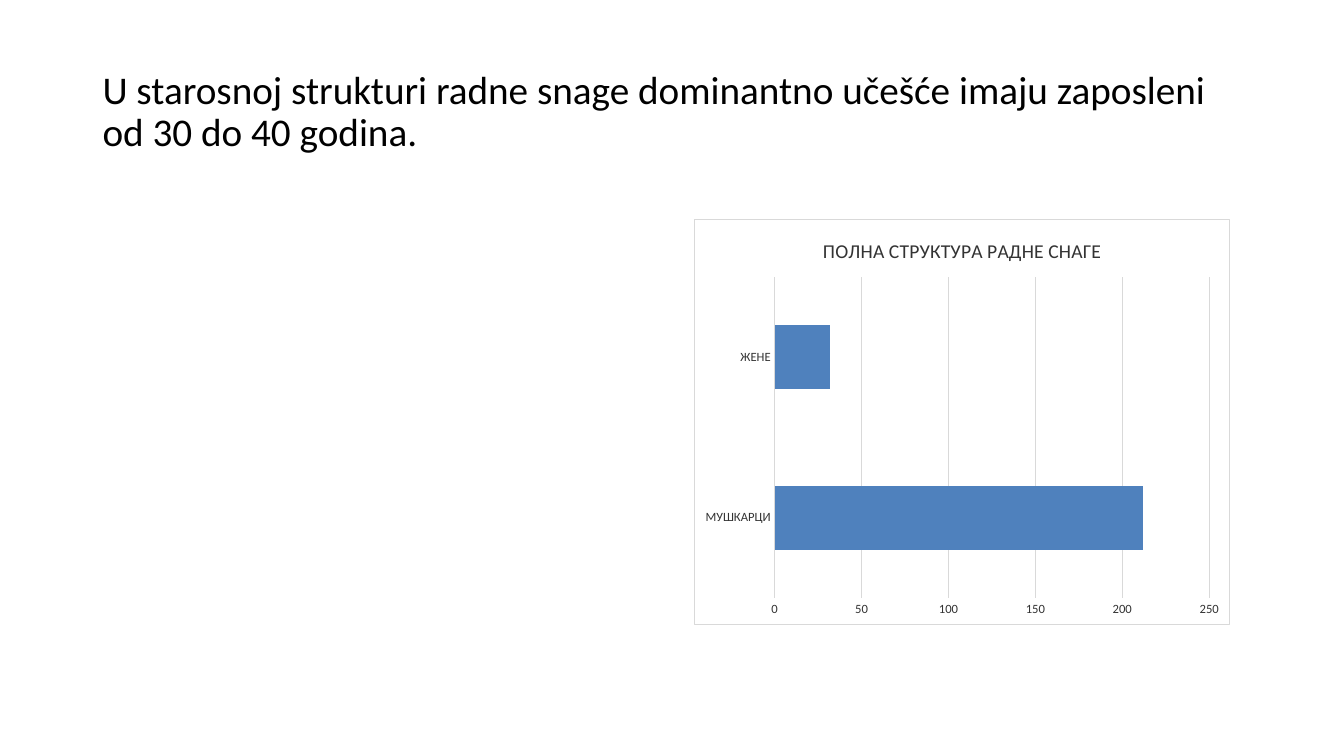
"""Build a slide with a title and a bar chart of the workforce by gender."""
from lxml import etree
from pptx import Presentation
from pptx import util as u
from pptx.chart.data import CategoryChartData
from pptx.dml.color import RGBColor
from pptx.enum import chart as charts, text
from pptx.oxml import parse_xml
from pptx.oxml.ns import nsdecls

BLACK = RGBColor(0x00, 0x00, 0x00)
DARK = RGBColor(0x33, 0x33, 0x33)
GREY = RGBColor(0xD9, 0xD9, 0xD9)
WHITE = RGBColor(0xFF, 0xFF, 0xFF)
BLUE = RGBColor(0x4F, 0x81, 0xBD)


class SlideBuilder:
    font_name = "Calibri"
    hairline = u.Pt(0.75)

    def __init__(self, page):
        self.page = page

    def style_font(self, font, size, color):
        font.name = self.font_name
        font.size = u.Pt(size)
        font.bold = False
        font.color.rgb = color

    def style_line(self, line):
        line.color.rgb = GREY
        line.width = self.hairline

    def title(self, wording, left, top, width, height):
        box = self.page.shapes.title
        box.left, box.top = u.Cm(left), u.Cm(top)
        box.width, box.height = u.Cm(width), u.Cm(height)
        frame = box.text_frame
        frame.word_wrap = True
        frame.vertical_anchor = text.MSO_ANCHOR.MIDDLE
        para = frame.paragraphs[0]
        para.alignment = text.PP_ALIGN.LEFT
        para.line_spacing = 0.9
        span = para.add_run()
        span.text = wording
        self.style_font(span.font, 28, BLACK)

    def bar_chart(self, heading, values, left, top, width, height):
        data = CategoryChartData()
        data.categories = list(values)
        data.add_series("Series 1", list(values.values()))
        chart = self.page.shapes.add_chart(
            charts.XL_CHART_TYPE.BAR_STACKED,
            u.Cm(left), u.Cm(top), u.Cm(width), u.Cm(height), data).chart
        self.style_font(chart.font, 10, BLACK)
        chart.has_legend = False
        chart.has_title = True
        span = chart.chart_title.text_frame.paragraphs[0].add_run()
        span.text = heading
        self.style_font(span.font, 14, DARK)

        plot = chart.plots[0]
        plot.gap_width, plot.overlap = 150, 100
        plot.vary_by_categories = False
        fill = plot.series[0].format.fill
        fill.solid()
        fill.fore_color.rgb = BLUE

        for axis in (chart.category_axis, chart.value_axis):
            axis.major_tick_mark = charts.XL_TICK_MARK.NONE
            axis.minor_tick_mark = charts.XL_TICK_MARK.NONE
            self.style_font(axis.tick_labels.font, 9, DARK)
        self.style_line(chart.category_axis.format.line)
        chart.value_axis.format.line.fill.background()
        chart.value_axis.has_major_gridlines = True
        self.style_line(chart.value_axis.major_gridlines.format.line)
        self.chart_frame(chart)

    def chart_frame(self, chart):
        frame = parse_xml(
            f'<c:spPr {nsdecls("c", "a")}>'
            f'<a:solidFill><a:srgbClr val="{WHITE}"/></a:solidFill>'
            f'<a:ln w="{self.hairline}"><a:solidFill>'
            f'<a:srgbClr val="{GREY}"/></a:solidFill></a:ln></c:spPr>')
        chart.element.chart.addnext(frame)


def main():
    deck = Presentation()
    deck.slide_width, deck.slide_height = u.Cm(33.87), u.Cm(19.05)
    builder = SlideBuilder(deck.slides.add_slide(deck.slide_layouts[5]))
    builder.title(
        "U starosnoj strukturi radne snage dominantno učešće imaju zaposleni "
        "od 30 do 40 godina.", 2.33, 1.01, 29.21, 3.68)
    builder.bar_chart("ПОЛНА СТРУКТУРА РАДНЕ СНАГЕ",
                      {"МУШКАРЦИ": 212, "ЖЕНЕ": 32},
                      17.5, 5.53, 13.5, 10.22)
    deck.save("out.pptx")


if __name__ == "__main__":
    main()
